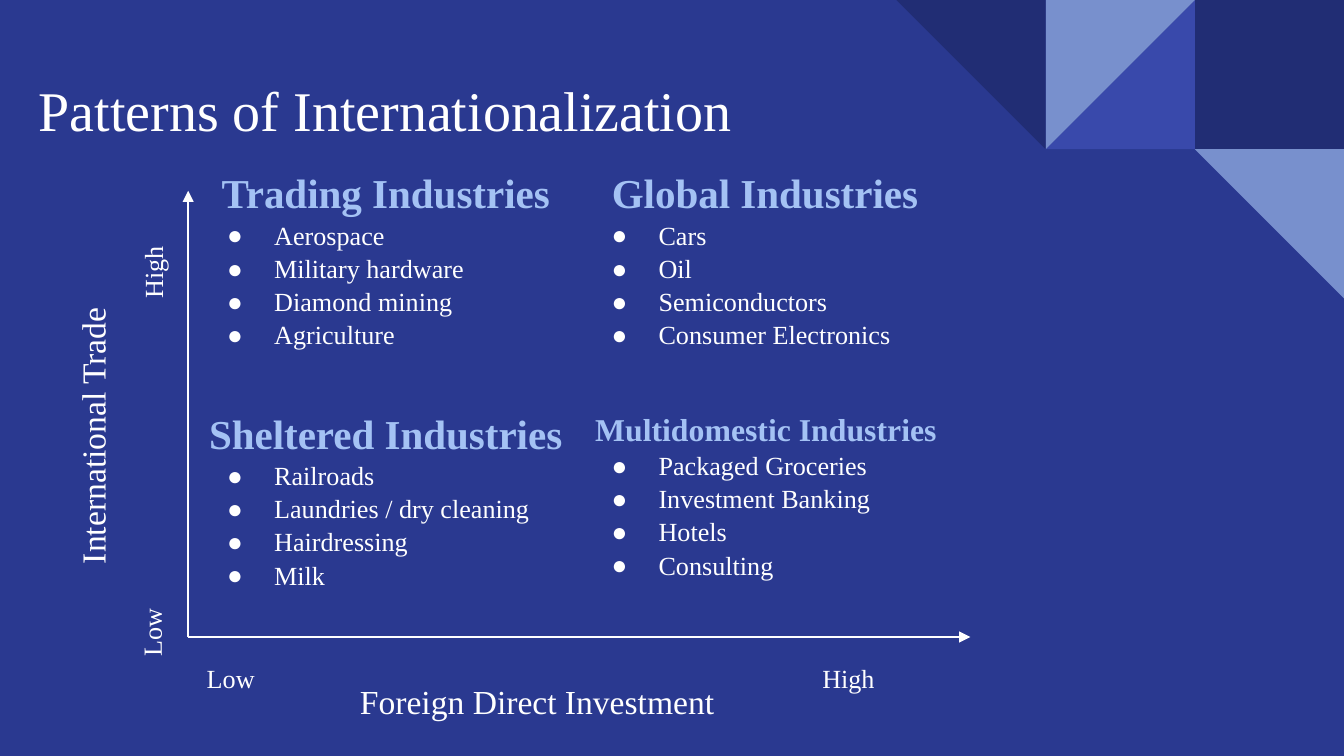
from lxml import etree
from pptx import Presentation
from pptx.dml.color import RGBColor
from pptx.enum.shapes import MSO_CONNECTOR as CONNECTOR, MSO_SHAPE as SHAPE
from pptx.enum.text import MSO_ANCHOR as ANCHOR, PP_ALIGN as ALIGN
from pptx.oxml.ns import qn
from pptx.util import Inches, Pt

COLORS = {"background": "2A3990", "dark": "212D74", "mid": "3949AB",
          "light": "7890CD", "heading": "A4C2F4", "white": "FFFFFF"}
FONT = "Times New Roman"
NO_STYLE = "{2D5ABB26-0587-4C30-8999-92F81FD0307C}"


def style_para(para, size, color="white", bold=False):
    for span in para.runs:
        span.font.name = FONT
        span.font.size = Pt(size)
        span.font.bold = bold
        span.font.color.rgb = RGBColor.from_string(COLORS[color])


def add_label(text, left, top, width, height, size, rotation=0):
    box = page.shapes.add_textbox(Inches(left), Inches(top), Inches(width), Inches(height))
    box.rotation = rotation
    frame = box.text_frame
    frame.word_wrap = True
    frame.margin_left = frame.margin_right = Inches(0.1)
    frame.margin_top = frame.margin_bottom = Inches(0.1)
    frame.text = text
    style_para(frame.paragraphs[0], size)
    return box


# Widescreen page, 16:9
deck = Presentation()
deck.slide_width, deck.slide_height = Inches(10), Inches(10 * 9 / 16)
page = deck.slides.add_slide(deck.slide_layouts[6])
page.background.fill.solid()
page.background.fill.fore_color.rgb = RGBColor.from_string(COLORS["background"])

# Corner mosaic: column and row on a grid of equal tiles
TILE = 1.11
tiles = [
    (2, 0, SHAPE.RECTANGLE, 0, "dark"),
    (1, 0, SHAPE.RIGHT_TRIANGLE, 270, "mid"),
    (1, 0, SHAPE.RIGHT_TRIANGLE, 90, "light"),
    (0, 0, SHAPE.RIGHT_TRIANGLE, 180, "dark"),
    (2, 1, SHAPE.RIGHT_TRIANGLE, 180, "light"),
]
for column, row, kind, rotation, color in tiles:
    tile = page.shapes.add_shape(kind, Inches(10 - (3 - column) * TILE), Inches(row * TILE),
                                 Inches(TILE), Inches(TILE))
    tile.rotation = rotation
    tile.shadow.inherit = False
    tile.fill.solid()
    tile.fill.fore_color.rgb = RGBColor.from_string(COLORS[color])
    tile.line.fill.background()

# Title
title = add_label("Patterns of Internationalization", 0.19, 0.24, 7.51, 1.15, 30)
title.text_frame.vertical_anchor = ANCHOR.MIDDLE

# Industry matrix: heading, heading size, examples
quadrants = [
    [("Trading Industries", 22,
      ["Aerospace", "Military hardware", "Diamond mining", "Agriculture"]),
     ("Global Industries ", 22,
      ["Cars", "Oil", "Semiconductors", "Consumer Electronics"])],
    [("Sheltered Industries ", 22,
      ["Railroads", "Laundries / dry cleaning", "Hairdressing", "Milk"]),
     ("Multidomestic Industries ", 17,
      ["Packaged Groceries", "Investment Banking", "Hotels", "Consulting"])],
]
matrix = page.shapes.add_table(2, 2, Inches(1.44), Inches(1.18),
                               Inches(2 * 2.86), Inches(2 * 1.79)).table
matrix.first_row = matrix.horz_banding = False
matrix._tbl.tblPr.find(qn("a:tableStyleId")).text = NO_STYLE
for row, quadrant_row in enumerate(quadrants):
    for column, (heading, size, examples) in enumerate(quadrant_row):
        cell = matrix.cell(row, column)
        cell.fill.background()
        cell.margin_left = cell.margin_right = Inches(0.1)
        cell.margin_top = cell.margin_bottom = Inches(0.1)
        cell.text_frame.text = heading
        heading_para = cell.text_frame.paragraphs[0]
        heading_para.alignment = ALIGN.CENTER
        style_para(heading_para, size, "heading", True)
        for example in examples:
            para = cell.text_frame.add_paragraph()
            para.text = example
            para.line_spacing = 1.15
            style_para(para, 14)
            # Hanging white bullet
            props = para._p.get_or_add_pPr()
            props.set("marL", str(Inches(0.5)))
            props.set("indent", str(Inches(-0.35)))
            bullet_color = etree.SubElement(props, qn("a:buClr"))
            etree.SubElement(bullet_color, qn("a:srgbClr"), val=COLORS["white"])
            etree.SubElement(props, qn("a:buFont"), typeface=FONT)
            etree.SubElement(props, qn("a:buChar"), char="●")

# Axis labels
add_label("High", 0.54, 1.56, 1.14, 0.38, 14, 270)
add_label("High", 6.02, 4.83, 1.14, 0.38, 14)
add_label("Low", 0.53, 4.22, 1.14, 0.38, 14, 270)
add_label("Low", 1.44, 4.83, 1.14, 0.38, 14)
add_label("International Trade", -0.69, 2.79, 2.63, 0.38, 18, 270)
add_label("Foreign Direct Investment", 2.58, 4.97, 3.61, 0.38, 18)

# Axes from a shared origin
for end_x, end_y in [(1.4, 1.42), (7.22, 4.74)]:
    axis = page.shapes.add_connector(CONNECTOR.STRAIGHT, Inches(1.4), Inches(4.74),
                                     Inches(end_x), Inches(end_y))
    axis.line.color.rgb = RGBColor.from_string(COLORS["white"])
    axis.line.width = Pt(0.75)
    etree.SubElement(axis.line._get_or_add_ln(), qn("a:tailEnd"), type="triangle")
    etree.SubElement(axis._element.spPr, qn("a:effectLst"))

deck.save("out.pptx")
